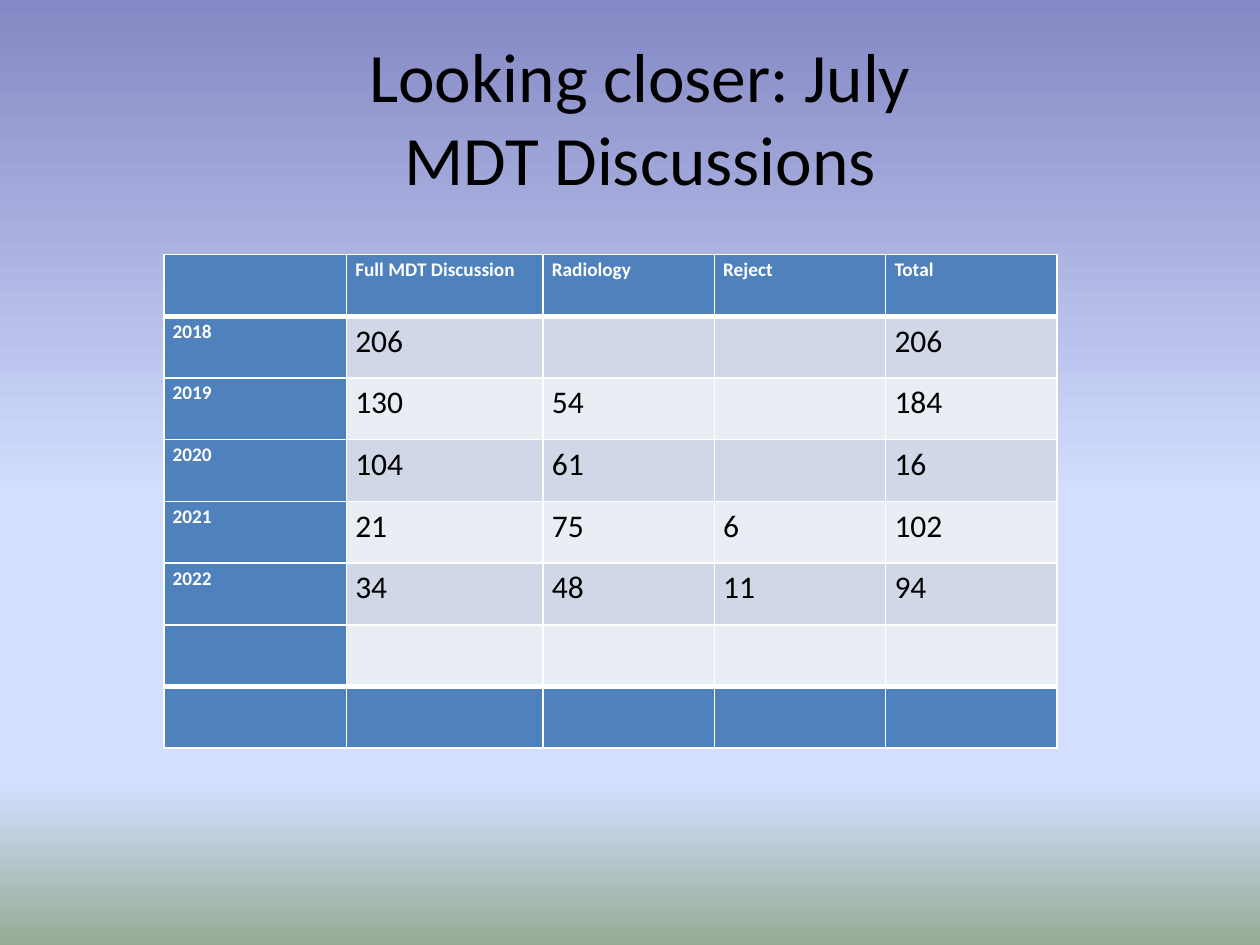
import dataclasses

import pptx
import pptx.dml.color
import pptx.enum.text
import pptx.oxml.ns
import pptx.oxml.xmlchemy
import pptx.util
from lxml import etree

Inches = pptx.util.Inches
Pt = pptx.util.Pt
qn = pptx.oxml.ns.qn

FONT = "Calibri"
WHITE, BLACK, BLUE = "FFFFFF", "000000", "4F81BD"
BANDS = ("D0D8E8", "E9EDF4")
SKY_STOPS = ((0, "8488C4"), (53, "D4DEFF"), (83, "D4DEFF"), (100, "96AB94"))

COLUMN_WIDTHS = (1.45, 1.56, 1.36, 1.36, 1.36)
ROW_HEIGHT = 0.49
ROWS = (
    ("", "Full MDT Discussion", "Radiology", "Reject", "Total"),
    ("2018", "206", "", "", "206"),
    ("2019", "130", "54", "", "184"),
    ("2020", "104", "61", "", "16"),
    ("2021", "21", "75", "6", "102"),
    ("2022", "34", "48", "11", "94"),
    ("", "", "", "", ""),
    ("", "", "", "", ""),
)


@dataclasses.dataclass(frozen=True)
class CellStyle:
    fill: str
    color: str
    size: float
    bold: bool
    top: float = 1
    bottom: float = 1


def rgb(value: str) -> pptx.dml.color.RGBColor:
    return pptx.dml.color.RGBColor.from_string(value)


def add_run(paragraph, text: str, size: float, color: str, bold: bool = False) -> None:
    run = paragraph.add_run()
    run.text = text
    run.font.name = FONT
    run.font.size = Pt(size)
    run.font.bold = bold
    run.font.color.rgb = rgb(color)


def set_background(slide) -> None:
    """Fill the background with the vertical sky gradient."""
    fill = slide.background.fill
    fill.gradient()
    fill.gradient_angle = 270
    stop_list = next(slide.element.iter(qn("a:gsLst")))
    for stop in list(stop_list):
        stop_list.remove(stop)
    for position, color in SKY_STOPS:
        stop = etree.SubElement(stop_list, qn("a:gs"), pos=str(position * 1000))
        etree.SubElement(stop, qn("a:srgbClr"), val=color)


def add_border(properties, side: str, width: float) -> None:
    line = etree.SubElement(properties, qn(f"a:ln{side}"), w=str(Pt(width)))
    solid = etree.SubElement(line, qn("a:solidFill"))
    etree.SubElement(solid, qn("a:srgbClr"), val=WHITE)


def style_for(row: int, column: int) -> CellStyle:
    last_row = len(ROWS) - 1
    if row in (0, last_row) or column == 0:
        return CellStyle(
            BLUE, WHITE, 11, True,
            top=3 if row in (1, last_row) else 1,
            bottom=3 if row in (0, last_row - 1) else 1,
        )
    return CellStyle(
        BANDS[(row - 1) % 2], BLACK, 18, False,
        top=3 if row == 1 else 1,
        bottom=3 if row == last_row - 1 else 1,
    )


def fill_cell(cell, text: str, style: CellStyle) -> None:
    properties = cell._tc.get_or_add_tcPr()
    for side, width in (("L", 1), ("R", 1), ("T", style.top), ("B", style.bottom)):
        add_border(properties, side, width)
    cell.fill.solid()
    cell.fill.fore_color.rgb = rgb(style.fill)
    if text:
        cell.margin_left = cell.margin_right = Inches(0.07)
        cell.margin_top = cell.margin_bottom = 0
        paragraph = cell.text_frame.paragraphs[0]
        paragraph.line_spacing = 1.15
        add_run(paragraph, text, style.size, style.color, style.bold)


def add_discussion_table(slide) -> None:
    frame = slide.shapes.add_table(
        len(ROWS), len(COLUMN_WIDTHS), Inches(1.3), Inches(2.02),
        Inches(sum(COLUMN_WIDTHS)), Inches(ROW_HEIGHT * len(ROWS)),
    )
    table = frame.table
    table.first_col = table.last_row = True
    for column, width in zip(table.columns, COLUMN_WIDTHS):
        column.width = Inches(width)
    for row_index, values in enumerate(ROWS):
        for column_index, text in enumerate(values):
            cell = table.cell(row_index, column_index)
            fill_cell(cell, text, style_for(row_index, column_index))


def set_title(slide) -> None:
    title = slide.shapes.title
    title.left, title.top = Inches(0.58), Inches(0.3)
    title.width, title.height = Inches(9), Inches(1.25)
    title.text_frame.vertical_anchor = pptx.enum.text.MSO_ANCHOR.MIDDLE
    paragraph = title.text_frame.paragraphs[0]
    paragraph.alignment = pptx.enum.text.PP_ALIGN.CENTER
    add_run(paragraph, "Looking closer: July", 39.6, BLACK)
    paragraph.add_line_break()
    add_run(paragraph, "MDT Discussions", 39.6, BLACK)


def main() -> None:
    presentation = pptx.Presentation()
    presentation.slide_width = Inches(10)
    presentation.slide_height = Inches(7.5)
    slide = presentation.slides.add_slide(presentation.slide_layouts[5])
    set_background(slide)
    set_title(slide)
    add_discussion_table(slide)
    presentation.save("out.pptx")


if __name__ == "__main__":
    main()
